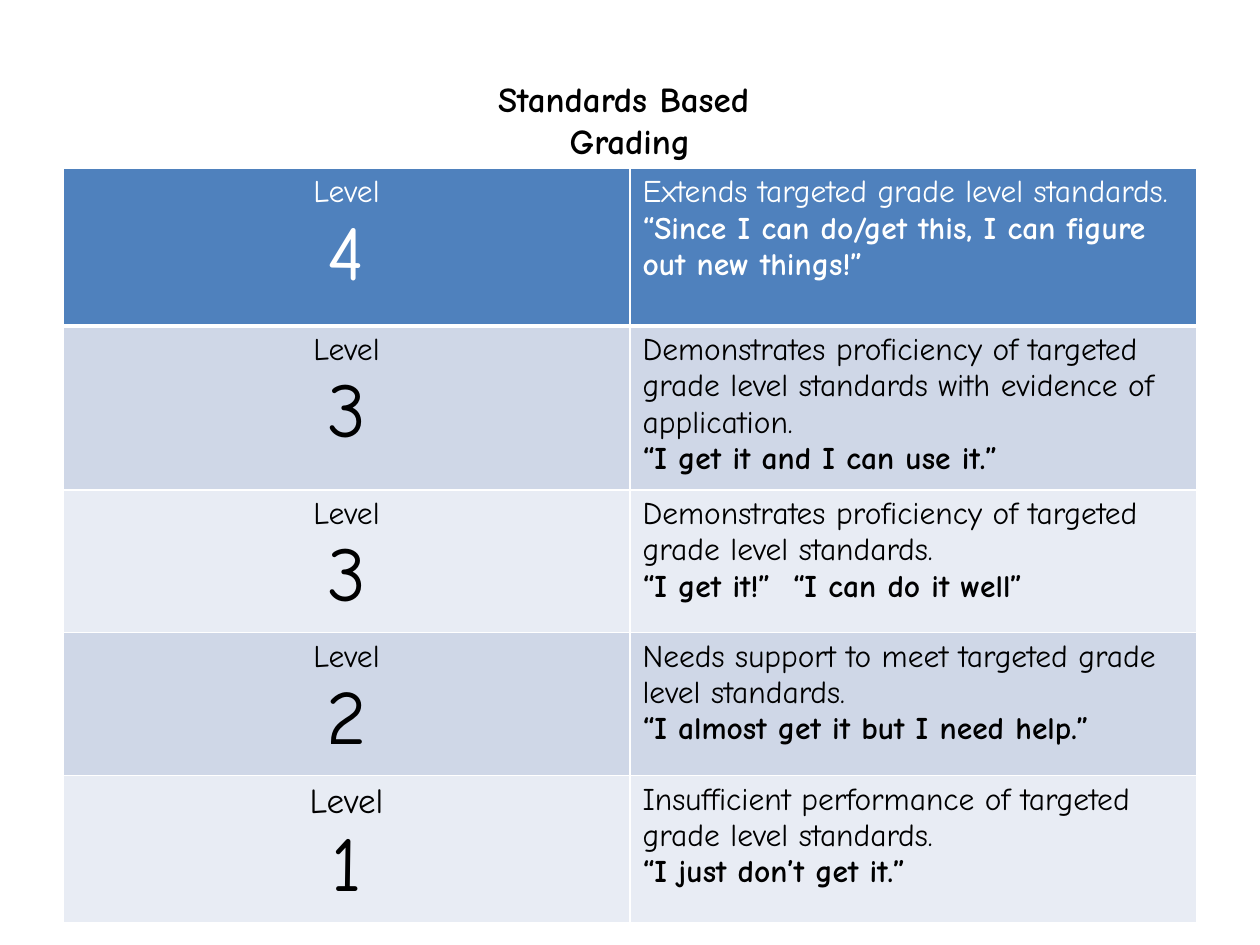
from lxml.etree import SubElement
from pptx import Presentation
from pptx.dml.color import RGBColor
from pptx.enum.text import MSO_ANCHOR, PP_ALIGN
from pptx.oxml.ns import qn
from pptx.util import Cm, Pt

FONT = "Comic Neue"
WHITE, BLACK = "FFFFFF", "000000"
HEADER_FILL, DARK_BAND, LIGHT_BAND = "4F81BD", "CFD7E7", "E8ECF4"
LEFT, COLUMN_WIDTH = 1.27, 11.43

# Row height in cm, label size, level, description, student's words
LEVELS = [
    (3.18, 18, "4", "Extends targeted grade level standards.",
     "“Since I can do/get this, I can figure out new things!”"),
    (3.23, 18, "3", "Demonstrates proficiency of targeted grade level standards "
     "with evidence of application.", "“I get it and I can use it.”"),
    (2.77, 18, "3", "Demonstrates proficiency of targeted grade level standards.",
     "“I get it!”  “I can do it well”"),
    (2.77, 18, "2", "Needs support to meet targeted grade level standards.",
     "“I almost get it but I need help.”"),
    (2.84, 20, "1", "Insufficient performance of targeted grade level standards.",
     "“I just don’t get it.”"),
]


def colour(value):
    return RGBColor.from_string(value)


class GradingSlide:
    def __init__(self, deck):
        self.slide = deck.slides.add_slide(deck.slide_layouts[6])

    def add_run(self, para, text, size, text_colour, bold=False):
        span = para.add_run()
        span.text = text
        span.font.name = FONT
        span.font.size = Pt(size)
        span.font.bold = bold
        span.font.color.rgb = colour(text_colour)

    def title(self, lines, left, top, width, height):
        box = self.slide.shapes.add_textbox(Cm(left), Cm(top), Cm(width), Cm(height))
        frame = box.text_frame
        frame.word_wrap = True
        frame.vertical_anchor = MSO_ANCHOR.MIDDLE
        frame.margin_top = Cm(0.89)
        para = frame.paragraphs[0]
        para.alignment = PP_ALIGN.CENTER
        for index, line in enumerate(lines):
            if index:
                para.add_line_break()
            self.add_run(para, line, 20, BLACK, bold=True)

    def borders(self, cell, widths):
        properties = cell._tc.get_or_add_tcPr()
        for index, (side, width) in enumerate(widths.items()):
            line = SubElement(properties, qn(f"a:ln{side}"), w=str(Pt(width)))
            fill = SubElement(line, qn("a:solidFill"))
            SubElement(fill, qn("a:srgbClr"), val=WHITE)
            properties.insert(index, line)

    def cell(self, cell, fill, widths, alignment, text_colour, texts):
        cell.fill.solid()
        cell.fill.fore_color.rgb = colour(fill)
        self.borders(cell, widths)
        frame = cell.text_frame
        for index, (text, size, bold) in enumerate(texts):
            para = frame.add_paragraph() if index else frame.paragraphs[0]
            para.alignment = alignment
            self.add_run(para, text, size, text_colour, bold)

    def level_table(self, levels, left, top, column_width):
        height = sum(level[0] for level in levels)
        table = self.slide.shapes.add_table(
            len(levels), 2, Cm(left), Cm(top), Cm(2 * column_width), Cm(height)).table
        for column in table.columns:
            column.width = Cm(column_width)
        for index, (row_height, label_size, level, description, quote) in enumerate(levels):
            table.rows[index].height = Cm(row_height)
            # The top level is the header; the others alternate in bands
            fill = (DARK_BAND if index % 2 else LIGHT_BAND) if index else HEADER_FILL
            text_colour = BLACK if index else WHITE
            widths = {"L": 1, "R": 1, "T": 3 if index == 1 else 1, "B": 1 if index else 3}
            self.cell(table.cell(index, 0), fill, widths, PP_ALIGN.CENTER, text_colour,
                      [("Level", label_size, False), (level, 44, False)])
            self.cell(table.cell(index, 1), fill, widths, PP_ALIGN.LEFT, text_colour,
                      [(description, 18, False), (quote, 18, True)])


def main():
    deck = Presentation()
    deck.slide_width, deck.slide_height = Cm(25.4), Cm(19.05)
    page = GradingSlide(deck)

    # Title
    page.title(["Standards Based ", "Grading"], LEFT, 0.43, 2 * COLUMN_WIDTH, 3.18)

    # Grading levels
    page.level_table(LEVELS, LEFT, 3.39, COLUMN_WIDTH)

    deck.save("out.pptx")


if __name__ == "__main__":
    main()
